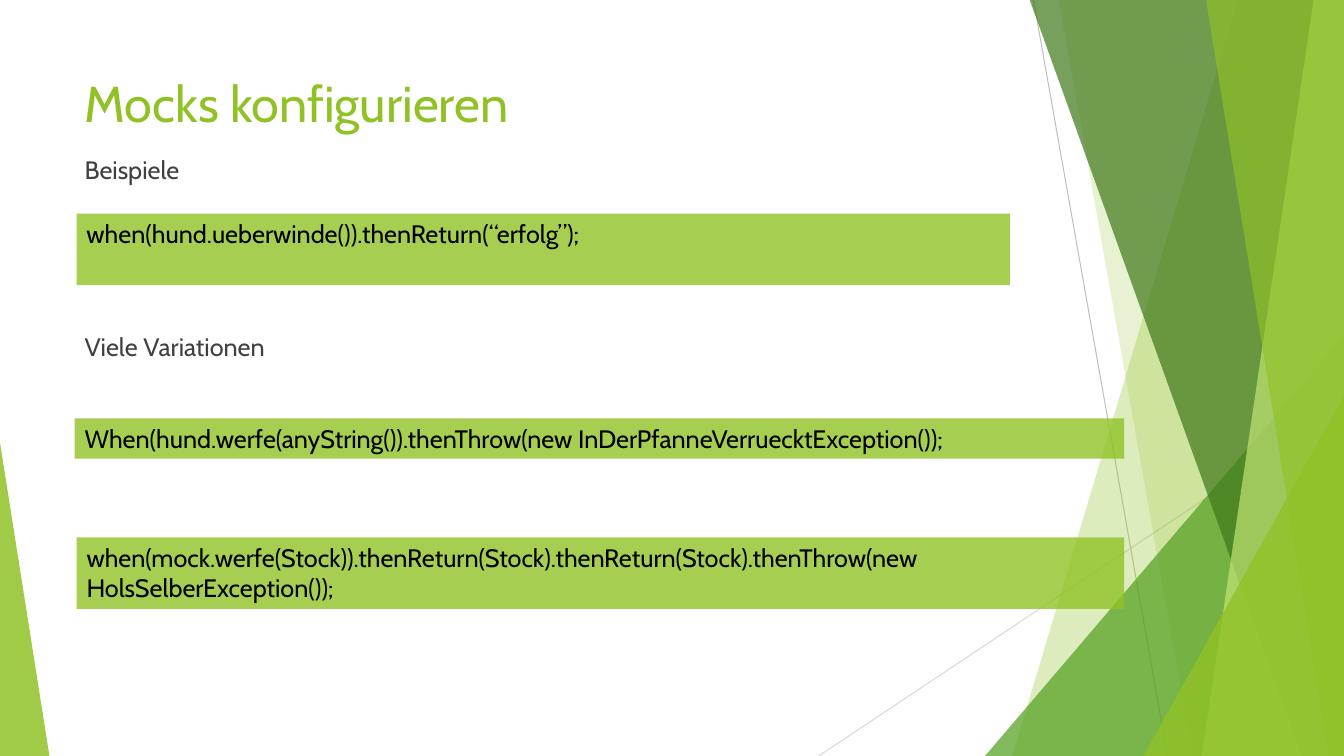
from dataclasses import dataclass
from lxml.etree import SubElement
from pptx import Presentation
from pptx.dml.color import RGBColor
from pptx.enum.shapes import MSO_CONNECTOR, MSO_SHAPE
from pptx.enum.text import MSO_ANCHOR, PP_ALIGN
from pptx.oxml.ns import qn
from pptx.util import Inches, Pt


@dataclass(frozen=True)
class Theme:
    lime: str = "90C226"
    leaf: str = "54A021"
    moss: str = "3F7819"
    pale: str = "C0E474"
    gray: str = "404040"
    black: str = "000000"
    rule: str = "BFBFBF"
    faint: str = "D9D9D9"
    font: str = "Cabin"
    head: int = 36
    body: int = 18
    hair: float = 0.75


THEME = Theme()
WIDTH, HEIGHT, TOP = 13.33, 7.5, -0.01


def apply(target, values):
    for name, value in values.items():
        setattr(target, name, value)


def paint(shape, color, alpha):
    shape.shadow.inherit = False
    shape.line.fill.background()
    shape.fill.solid()
    shape.fill.fore_color.rgb = RGBColor.from_string(color)
    tint = shape.fill._xPr.find(qn("a:solidFill"))[0]
    SubElement(tint, qn("a:alpha"), val=str(alpha * 1000))


def add_line(slide, start, end, color):
    line = slide.shapes.add_connector(
        MSO_CONNECTOR.STRAIGHT, *map(Inches, start + end))
    line.line.color.rgb = RGBColor.from_string(color)
    line.line.width = Pt(THEME.hair)
    SubElement(line._element.spPr, qn("a:effectLst"))


def add_band(slide, upper, lower, color, alpha):
    pen = slide.shapes.build_freeform(Inches(upper), Inches(TOP), scale=1.0)
    corners = [(WIDTH, TOP), (WIDTH, HEIGHT), (lower, HEIGHT)]
    pen.add_line_segments(
        [(Inches(x), Inches(y)) for x, y in corners], close=True)
    paint(pen.convert_to_shape(), color, alpha)


def add_wedge(slide, left, top, width, peak, color, alpha):
    wedge = slide.shapes.add_shape(
        MSO_SHAPE.ISOSCELES_TRIANGLE,
        *map(Inches, (left, top, width, HEIGHT - top)))
    wedge.adjustments[0] = peak
    paint(wedge, color, alpha)


def write(shape, lines, size, color, gap=0):
    frame = shape.text_frame
    apply(frame, {"word_wrap": True, "vertical_anchor": MSO_ANCHOR.TOP})
    frame.text = "\n".join(lines)
    for index, para in enumerate(frame.paragraphs):
        apply(para, {"alignment": PP_ALIGN.LEFT,
                     "space_before": Pt(gap if index else 0)})
        apply(para.font, {"name": THEME.font, "size": Pt(size)})
        para.font.color.rgb = RGBColor.from_string(color)


def add_text(slide, place, lines, size, color, gap=0):
    box = slide.shapes.add_textbox(*map(Inches, place))
    write(box, lines, size, color, gap)


def add_code(slide, place, code):
    box = slide.shapes.add_shape(MSO_SHAPE.RECTANGLE, *map(Inches, place))
    paint(box, THEME.lime, 80)
    write(box, [code], THEME.body, THEME.black)


def add_decor(slide):
    add_line(slide, (10.25, 0), (11.58, HEIGHT), THEME.rule)
    add_line(slide, (WIDTH, 4.03), (8.12, HEIGHT), THEME.faint)
    add_band(slide, 12.28, 10.04, THEME.lime, 30)
    add_band(slide, 10.5, 11.83, THEME.lime, 20)
    add_wedge(slide, 9.77, 3.33, 3.56, 1, THEME.leaf, 72)
    add_band(slide, 10.21, 12.91, THEME.moss, 70)
    add_band(slide, 13.03, 11.92, THEME.pale, 70)
    add_band(slide, 11.96, 13.18, THEME.lime, 65)
    add_wedge(slide, 11.34, 3.93, 1.99, 1, THEME.lime, 80)
    add_wedge(slide, 0, 4.39, 0.49, 0, THEME.lime, 85)


def main():
    deck = Presentation()
    apply(deck, {"slide_width": Inches(WIDTH), "slide_height": Inches(HEIGHT)})
    slide = deck.slides.add_slide(deck.slide_layouts[6])
    add_decor(slide)
    add_text(slide, (0.74, 0.67, 9.4, 0.81), ["Mocks konfigurieren"],
             THEME.head, THEME.lime)
    add_text(slide, (0.74, 1.48, 9.4, 3.07), ["Beispiele", "Viele Variationen"],
             THEME.body, THEME.gray, gap=105)
    codes = [
        ((0.76, 2.12, 9.26, 0.71),
         "when(hund.ueberwinde()).thenReturn(“erfolg”);"),
        ((0.74, 4.15, 10.41, 0.4),
         "When(hund.werfe(anyString()).thenThrow("
         "new InDerPfanneVerruecktException());"),
        ((0.76, 5.33, 10.39, 0.71),
         "when(mock.werfe(Stock)).thenReturn(Stock).thenReturn(Stock)"
         ".thenThrow(new HolsSelberException());"),
    ]
    for place, code in codes:
        add_code(slide, place, code)
    deck.save("out.pptx")


if __name__ == "__main__":
    main()
